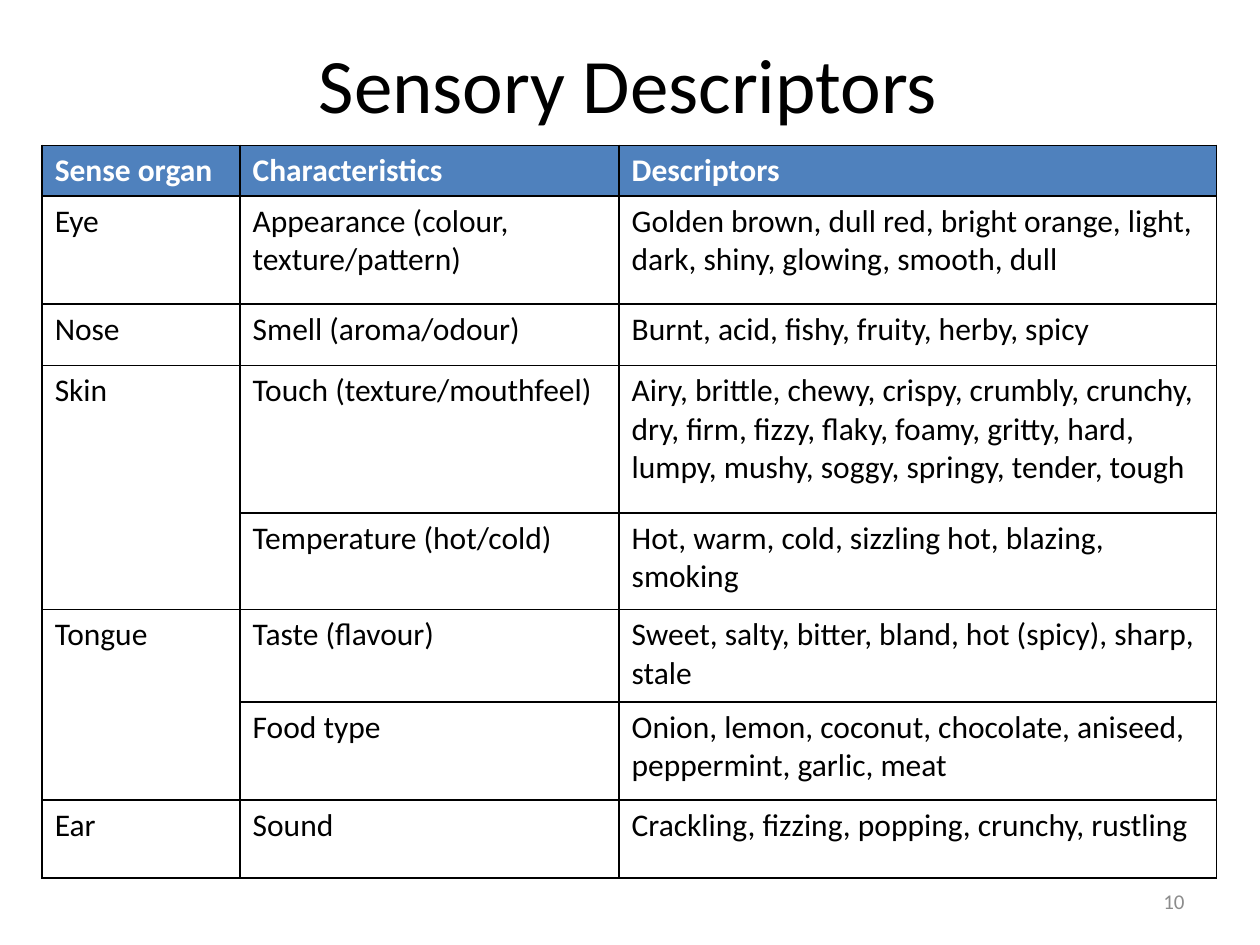
from lxml.etree import SubElement
from pptx import Presentation
from pptx.dml.color import RGBColor
from pptx.enum.text import MSO_ANCHOR, PP_ALIGN
from pptx.oxml.ns import qn
from pptx.util import Cm, Pt

HEADINGS = ("Sense organ", "Characteristics", "Descriptors")
SENSES = [
    ("Eye", "Appearance (colour, texture/pattern)",
     "Golden brown, dull red, bright orange, light, dark, shiny, glowing, smooth, dull"),
    ("Nose", "Smell (aroma/odour)", "Burnt, acid, fishy, fruity, herby, spicy"),
    ("Skin", "Touch (texture/mouthfeel)",
     "Airy, brittle, chewy, crispy, crumbly, crunchy, dry, firm, fizzy, flaky, "
     "foamy, gritty, hard, lumpy, mushy, soggy, springy, tender, tough"),
    (None, "Temperature (hot/cold)", "Hot, warm, cold, sizzling hot, blazing, smoking"),
    ("Tongue", "Taste (flavour)", "Sweet, salty, bitter, bland, hot (spicy), sharp, stale"),
    (None, "Food type", "Onion, lemon, coconut, chocolate, aniseed, peppermint, garlic, meat"),
    ("Ear", "Sound", "Crackling, fizzing, popping, crunchy, rustling"),
]
COLUMN_WIDTHS = (3.99, 7.64, 12.04)
ROW_HEIGHTS = (1.02, 2.18, 1.24, 2.97, 1.95, 1.86, 1.98, 1.57)


def colour(code):
    return RGBColor.from_string(code)


class SlideWriter:
    """Holds the style and the current page, and adds elements to it."""

    font_name = "Calibri"
    ink = "000000"
    accent = "4F81BD"
    light = "FFFFFF"
    muted = "8C8C8C"

    def __init__(self, page):
        self.page = page

    def style(self, para, size, code, bold=False):
        font = para.font
        font.name, font.size, font.bold = self.font_name, Pt(size), bold
        font.color.rgb = colour(code)

    def text(self, words, left, top, width, height, size, code, align):
        box = self.page.shapes.add_textbox(Cm(left), Cm(top), Cm(width), Cm(height))
        frame = box.text_frame
        frame.word_wrap = True
        frame.vertical_anchor = MSO_ANCHOR.MIDDLE
        para = frame.paragraphs[0]
        para.text, para.alignment = words, align
        self.style(para, size, code)

    def borders(self, cell):
        properties = cell._tc.get_or_add_tcPr()
        for side in ("a:lnL", "a:lnR", "a:lnT", "a:lnB"):
            line = SubElement(properties, qn(side), w=str(Pt(1)))
            fill = SubElement(line, qn("a:solidFill"))
            SubElement(fill, qn("a:srgbClr"), val=self.ink)

    def cell(self, cell, words, heading):
        self.borders(cell)
        if heading:
            cell.fill.solid()
            cell.fill.fore_color.rgb = colour(self.accent)
        else:
            cell.fill.background()
        para = cell.text_frame.paragraphs[0]
        if words:
            para.text = words
        self.style(para, 18, self.light if heading else self.ink, heading)

    def table(self, rows, left, top, widths, heights):
        table = self.page.shapes.add_table(
            len(rows), len(widths), Cm(left), Cm(top), Cm(sum(widths)), Cm(sum(heights))
        ).table
        table.horz_banding = False
        for column, width in zip(table.columns, widths):
            column.width = Cm(width)
        for row, height in zip(table.rows, heights):
            row.height = Cm(height)
        for r, row in enumerate(rows):
            for c, words in enumerate(row):
                self.cell(table.cell(r, c), words, r == 0)
                if words is None:
                    table.cell(r - 1, c).merge(table.cell(r, c))


def main():
    deck = Presentation()
    deck.slide_width, deck.slide_height = Cm(25.4), Cm(19.05)
    writer = SlideWriter(deck.slides.add_slide(deck.slide_layouts[6]))
    writer.text("Sensory Descriptors", 1.24, 0.08, 22.86, 3.18, 44, writer.ink, PP_ALIGN.CENTER)
    writer.table([HEADINGS, *SENSES], 0.85, 2.93, COLUMN_WIDTHS, ROW_HEIGHTS)
    writer.text("10", 18.2, 17.66, 5.93, 1.01, 12, writer.muted, PP_ALIGN.RIGHT)
    deck.save("out.pptx")


if __name__ == "__main__":
    main()
